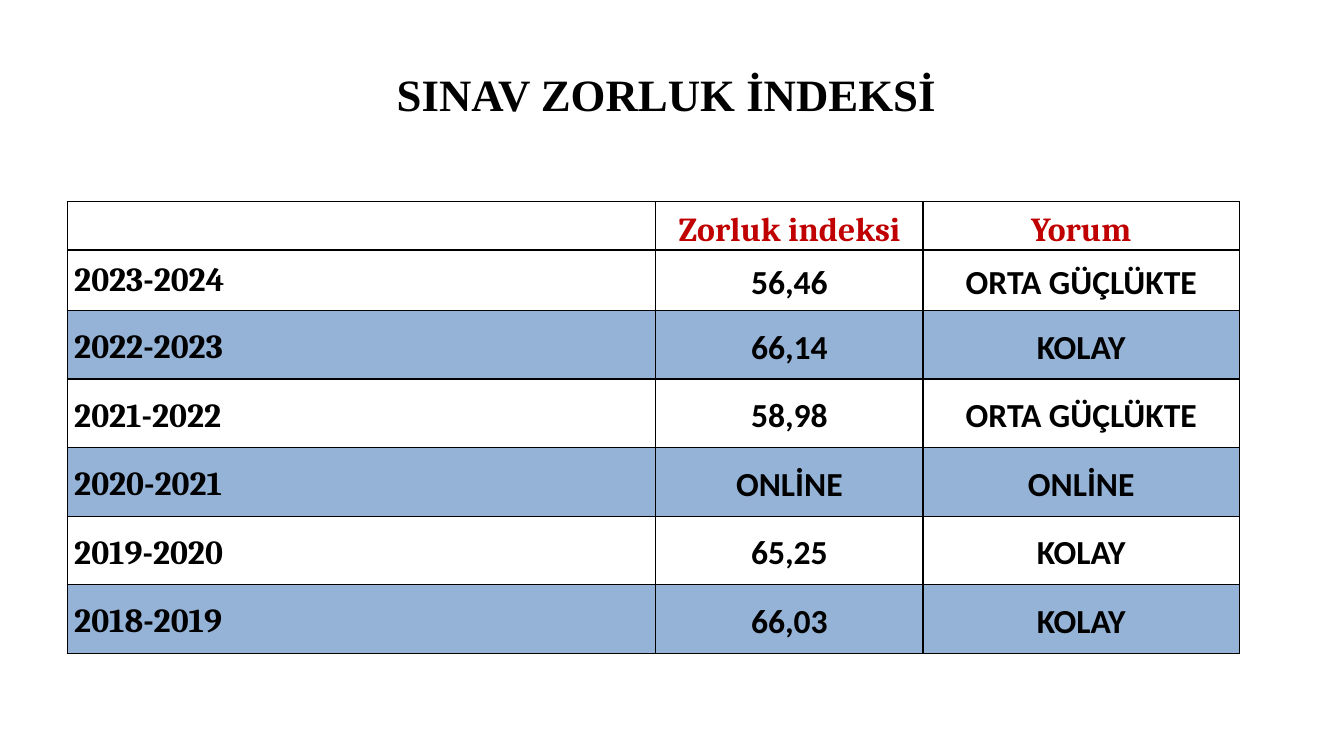
from dataclasses import dataclass

import lxml.etree
import pptx
import pptx.dml.color
import pptx.enum.text
import pptx.oxml.ns
import pptx.table
import pptx.text.text
import pptx.util

Color = pptx.dml.color.RGBColor
Align = pptx.enum.text.PP_ALIGN
Anchor = pptx.enum.text.MSO_ANCHOR

BLACK = Color(0, 0, 0)
WHITE = Color(255, 255, 255)
RED = Color(0xC0, 0, 0)
BLUE = Color(0x95, 0xB3, 0xD7)

WIDTH = pptx.util.Inches(13.33)
HEIGHT = pptx.util.Inches(7.5)

# Lengths are percent of the slide's width or height.
LEFT = 5
TABLE_TOP = 26.67
COLS = (43.8, 19.88, 23.55)
ROWS = (6.4, 8) + (9.07,) * 5
THIN, THICK = 1, 2.25


@dataclass(frozen=True)
class Style:
    font: str
    size: int
    color: Color
    align: Align
    lines: float = 1.15


@dataclass(frozen=True)
class Year:
    label: str
    index: str
    comment: str


TITLE = Style("Times New Roman", 32, BLACK, Align.CENTER, 1)
HEAD = Style("Cambria", 24, RED, Align.CENTER)
FIRST = Style("Cambria", 24, BLACK, Align.LEFT, 1)
LABEL = Style("Cambria", 24, BLACK, Align.LEFT)
VALUE = Style("Calibri", 24, BLACK, Align.CENTER)

HEADINGS = ("", "Zorluk indeksi", "Yorum")
YEARS = (
    Year("2023-2024", "56,46", "ORTA GÜÇLÜKTE"),
    Year("2022-2023", "66,14", "KOLAY"),
    Year("2021-2022", "58,98", "ORTA GÜÇLÜKTE"),
    Year("2020-2021", "ONLİNE", "ONLİNE"),
    Year("2019-2020", "65,25", "KOLAY"),
    Year("2018-2019", "66,03", "KOLAY"),
)


def across(share: float) -> int:
    return round(WIDTH * share / 100)


def down(share: float) -> int:
    return round(HEIGHT * share / 100)


def write(frame: pptx.text.text.TextFrame, text: str, style: Style) -> None:
    para = frame.paragraphs[0]
    para.alignment = style.align
    para.line_spacing = style.lines
    run = para.add_run()
    run.text = text
    run.font.name = style.font
    run.font.size = pptx.util.Pt(style.size)
    run.font.bold = True
    run.font.color.rgb = style.color


def border(cell: pptx.table._Cell, top: float, bottom: float) -> None:
    """Draw black lines on all four sides; call before the cell is filled."""
    name = pptx.oxml.ns.qn
    props = cell._tc.get_or_add_tcPr()
    for side, width in (("L", THIN), ("R", THIN), ("T", top), ("B", bottom)):
        line = lxml.etree.SubElement(
            props, name(f"a:ln{side}"), w=str(pptx.util.Pt(width)))
        fill = lxml.etree.SubElement(line, name("a:solidFill"))
        lxml.etree.SubElement(fill, name("a:srgbClr"), val=str(BLACK))


def fill_cell(cell: pptx.table._Cell, text: str, row: int, col: int) -> None:
    border(cell, THICK if row == 1 else THIN, THICK if row == 0 else THIN)
    cell.fill.solid()
    cell.fill.fore_color.rgb = BLUE if row and row % 2 == 0 else WHITE
    if not text:
        return
    cell.margin_left = cell.margin_right = pptx.util.Inches(0.07)
    cell.margin_top = cell.margin_bottom = 0
    cell.vertical_anchor = Anchor.MIDDLE if row else Anchor.BOTTOM
    if row == 0:
        style = HEAD
    elif col:
        style = VALUE
    else:
        style = FIRST if row == 1 else LABEL
    write(cell.text_frame, text, style)


def main() -> None:
    deck = pptx.Presentation()
    deck.slide_width, deck.slide_height = WIDTH, HEIGHT
    slide = deck.slides.add_slide(deck.slide_layouts[5])

    title = slide.shapes.title
    title.left, title.top = across(LEFT), down(4)
    title.width, title.height = across(90), down(16.67)
    title.text_frame.vertical_anchor = Anchor.MIDDLE
    write(title.text_frame, "SINAV ZORLUK İNDEKSİ ", TITLE)

    table = slide.shapes.add_table(
        len(ROWS), len(COLS), across(LEFT), down(TABLE_TOP),
        across(sum(COLS)), down(sum(ROWS))).table
    table.first_row = table.horz_banding = False
    for column, share in zip(table.columns, COLS):
        column.width = across(share)
    for line, share in zip(table.rows, ROWS):
        line.height = down(share)

    grid = [HEADINGS] + [(y.label, y.index, y.comment) for y in YEARS]
    for row, texts in enumerate(grid):
        for col, text in enumerate(texts):
            fill_cell(table.cell(row, col), text, row, col)

    deck.save("out.pptx")


if __name__ == "__main__":
    main()
